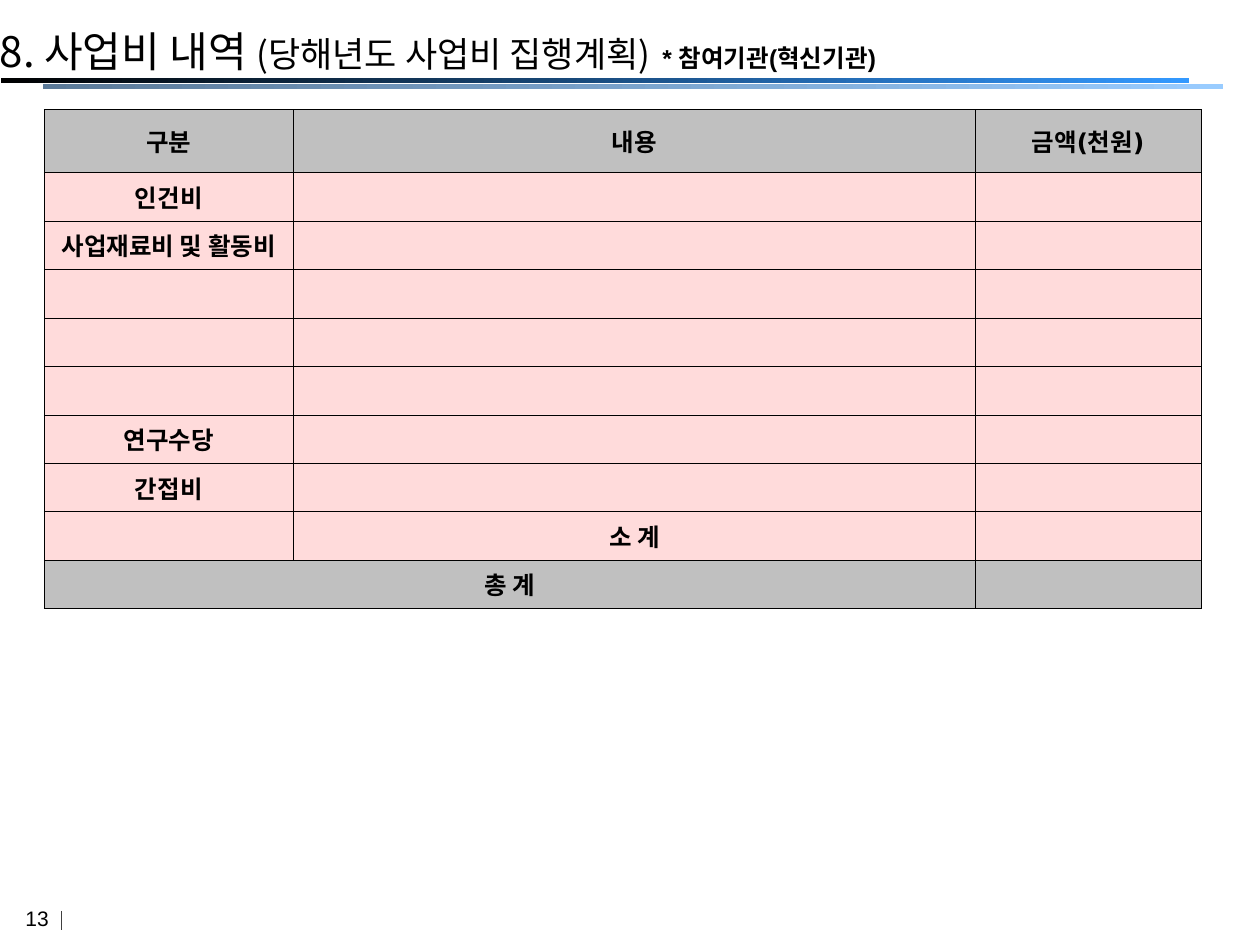
from lxml import etree
from pptx import Presentation
from pptx.dml.color import RGBColor
from pptx.enum.shapes import MSO_CONNECTOR, MSO_SHAPE
from pptx.enum.text import MSO_ANCHOR, PP_ALIGN
from pptx.oxml.ns import qn
from pptx.util import Inches, Pt

MIDDLE = MSO_ANCHOR.MIDDLE
CENTER = PP_ALIGN.CENTER
RECTANGLE = MSO_SHAPE.RECTANGLE
STRAIGHT = MSO_CONNECTOR.STRAIGHT

KOREAN = "Noto Sans CJK KR"
BLACK, GRAY, PINK = "000000", "C0C0C0", "FFCCCC"
TITLE = [
    ("8. 사업비 내역 ", 24, KOREAN, False),
    ("(당해년도 사업비 집행계획)", 20, KOREAN, False),
    (" ", 24, "Arial", True),
    ("* 참여기관(혁신기관)", 14, "Arial", True),
]
BARS = [
    (0.01, 0.62, 9.43, "000000", "3399FF"),
    (0.34, 0.67, 9.37, "5B7A99", "99CCFF"),
]
BUDGET = [
    ("구분", "내용", "금액(천원)"),
    ("인건비", "", ""),
    ("사업재료비 및 활동비", "", ""),
    ("", "", ""),
    ("", "", ""),
    ("", "", ""),
    ("연구수당", "", ""),
    ("간접비", "", ""),
    ("", "소 계", ""),
    ("총 계", "", ""),
]
COLUMN_WIDTHS = [1.98, 5.41, 1.79]
HEADER_HEIGHT, TABLE_HEIGHT = 0.5, 3.96
PAGE_NUMBER = "13"


def rgb(color):
    return RGBColor.from_string(color)


def style(run, size, name, bold=False):
    run.font.size = Pt(size)
    run.font.name = name
    run.font.bold = bold
    run.font.color.rgb = rgb(BLACK)
    latin = run.font._element.find(qn("a:latin"))
    east_asian = etree.Element(qn("a:ea"), typeface=KOREAN)
    latin.addnext(east_asian)


def add_bar(slide, left, top, width, start, end):
    bar = slide.shapes.add_shape(
        RECTANGLE, Inches(left), Inches(top), Inches(width), Inches(0.04))
    bar.shadow.inherit = False
    bar.line.fill.background()
    bar.fill.gradient()
    bar.fill.gradient_angle = 0
    for stop, color in zip(bar.fill.gradient_stops, (start, end)):
        stop.color.rgb = rgb(color)


def add_title(slide):
    frame = slide.shapes.add_textbox(
        Inches(0), Inches(0.23), Inches(9.64), Inches(0.64)).text_frame
    frame.word_wrap = True
    frame.vertical_anchor = MIDDLE
    frame.margin_left = frame.margin_right = frame.margin_top = 0
    frame.margin_bottom = Inches(0.25)
    heading = frame.paragraphs[0]
    heading.line_spacing = 0.9
    for text, size, name, bold in TITLE:
        run = heading.add_run()
        run.text = text
        style(run, size, name, bold)


def add_borders(cell):
    properties = cell._tc.get_or_add_tcPr()
    for side in ("lnL", "lnR", "lnT", "lnB"):
        line = etree.SubElement(properties, qn(f"a:{side}"), w=str(Pt(0.25)))
        fill = etree.SubElement(line, qn("a:solidFill"))
        etree.SubElement(fill, qn("a:srgbClr"), val=BLACK)


def fill_cell(cell, color, opacity):
    cell.fill.solid()
    cell.fill.fore_color.rgb = rgb(color)
    if opacity < 100:
        tone = cell._tc.tcPr.find(".//" + qn("a:solidFill") + "[last()]")
        tone = cell._tc.tcPr.find(qn("a:solidFill")).find(qn("a:srgbClr"))
        etree.SubElement(tone, qn("a:alpha"), val=str(opacity * 1000))


def add_budget(slide):
    last = len(BUDGET) - 1
    table = slide.shapes.add_table(
        len(BUDGET), len(COLUMN_WIDTHS), Inches(0.35), Inches(0.87),
        Inches(sum(COLUMN_WIDTHS)), Inches(TABLE_HEIGHT)).table
    table.first_row = table.horz_banding = False
    for column, width in zip(table.columns, COLUMN_WIDTHS):
        column.width = Inches(width)
    for index, (row, labels) in enumerate(zip(table.rows, BUDGET)):
        row.height = Inches(
            HEADER_HEIGHT if index == 0 else (TABLE_HEIGHT - HEADER_HEIGHT) / last)
        color, opacity = (GRAY, 100) if index in (0, last) else (PINK, 70)
        for cell, label in zip(row.cells, labels):
            add_borders(cell)
            fill_cell(cell, color, opacity)
            cell.vertical_anchor = MIDDLE
            cell.margin_left = cell.margin_right = Inches(0.02)
            cell.margin_top = cell.margin_bottom = Inches(0.02)
            if label:
                cell.text_frame.text = label
                entry = cell.text_frame.paragraphs[0]
                entry.alignment = CENTER
                style(entry.runs[0], 14, "DejaVu Sans", True)
    table.cell(last, 0).merge(table.cell(last, 1))


def add_page_number(slide):
    frame = slide.shapes.add_textbox(
        Inches(-0.05), Inches(7.14), Inches(0.69), Inches(0.35)).text_frame
    frame.word_wrap = False
    frame.text = PAGE_NUMBER
    number = frame.paragraphs[0]
    number.alignment = CENTER
    style(number.runs[0], 12, "Arial")
    divider = slide.shapes.add_connector(
        STRAIGHT, Inches(0.49), Inches(7.23), Inches(0.49), Inches(7.38))
    divider.line.color.rgb = rgb("404040")
    divider.line.width = Pt(0.75)
    etree.SubElement(divider._element.spPr, qn("a:effectLst"))


def main():
    deck = Presentation()
    deck.slide_width, deck.slide_height = Inches(10), Inches(7.5)
    slide = deck.slides.add_slide(deck.slide_layouts[6])
    add_page_number(slide)
    for bar in BARS:
        add_bar(slide, *bar)
    add_title(slide)
    add_budget(slide)
    deck.save("out.pptx")


if __name__ == "__main__":
    main()
